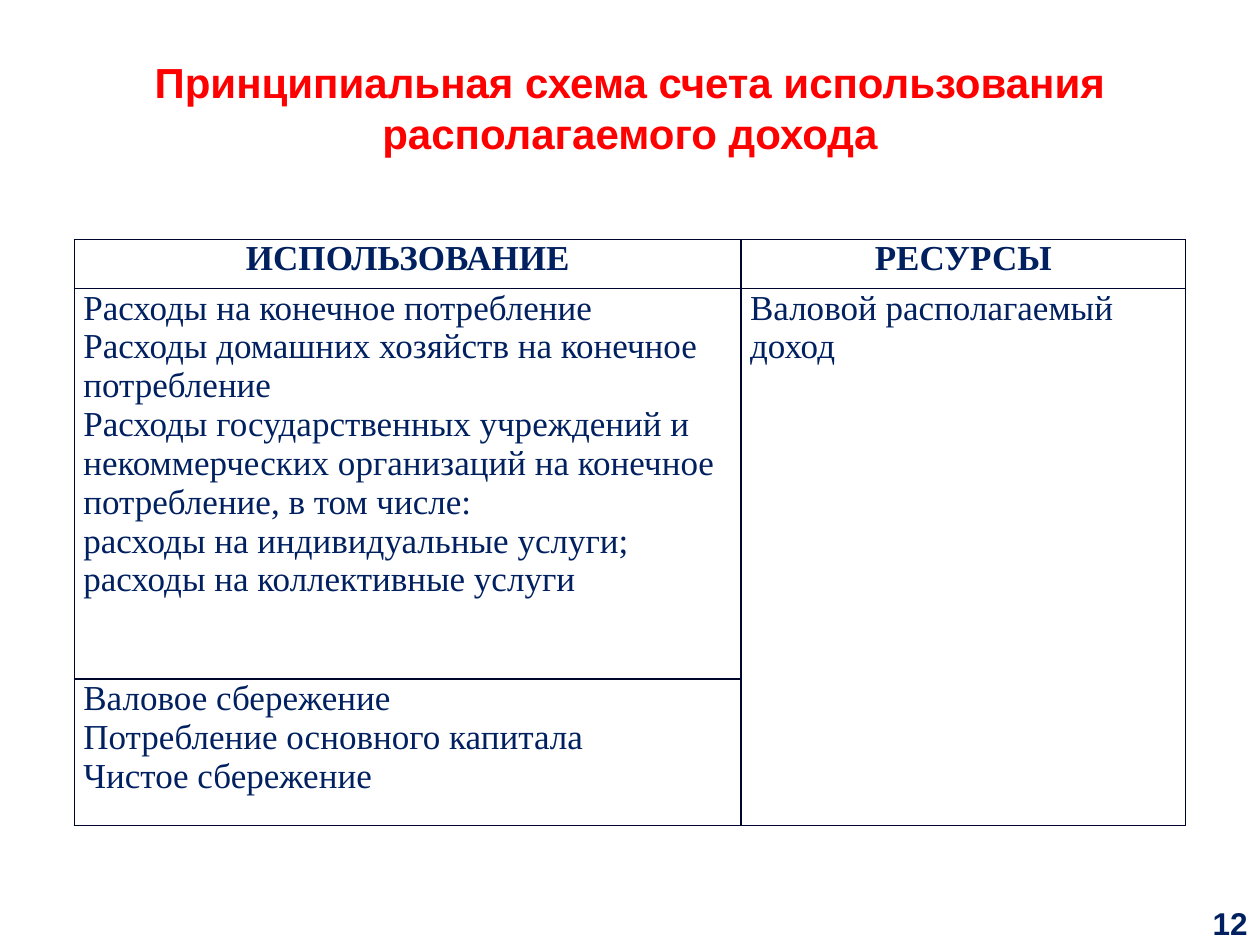
"""Build a slide with the scheme of the use of disposable income account."""
from lxml import etree
from pptx import Presentation
from pptx import util as u
from pptx.dml.color import RGBColor
from pptx.enum import text
from pptx.oxml import ns

RED = RGBColor(0xFF, 0x00, 0x00)
NAVY = RGBColor(0x00, 0x20, 0x60)
INK = RGBColor(0x00, 0x06, 0x2B)
LEFT, MID, RIGHT = text.PP_ALIGN.LEFT, text.PP_ALIGN.CENTER, text.PP_ALIGN.RIGHT


def write(frame, words, align, color, look):
    frame.word_wrap = True
    para = frame.paragraphs[0]
    para.text = words
    para.alignment = align
    for run in para.runs:
        run.font.color.rgb = color
        for key, val in look.items():
            setattr(run.font, key, val)


def edge(cell, side):
    line = etree.Element(ns.qn("a:" + side), w=str(u.Pt(1)))
    fill = etree.SubElement(line, ns.qn("a:solidFill"))
    etree.SubElement(fill, ns.qn("a:srgbClr"), val=str(INK))
    return line


deck = Presentation()
deck.slide_width, deck.slide_height = u.Cm(25.4), u.Cm(19.05)
slide = deck.slides.add_slide(deck.slide_layouts[6])

title = slide.shapes.add_textbox(u.Cm(0.6), u.Cm(1.02), u.Cm(24.2), u.Cm(2.3))
write(title.text_frame, "Принципиальная схема счета использования располагаемого дохода",
      MID, RED, {"name": "Arial", "size": u.Pt(24), "bold": True})

page = slide.shapes.add_textbox(u.Cm(24.1), u.Cm(18.14), u.Cm(1.3), u.Cm(0.98))
page.text_frame.vertical_anchor = text.MSO_ANCHOR.BOTTOM
write(page.text_frame, "12", RIGHT, NAVY,
      {"name": "Arial", "size": u.Pt(18), "bold": True})

rows = [
    ["ИСПОЛЬЗОВАНИЕ", "РЕСУРСЫ"],
    ["Расходы на конечное потребление\n"
     "Расходы домашних хозяйств на конечное потребление\n"
     "Расходы государственных учреждений и некоммерческих организаций "
     "на конечное потребление, в том числе:\n"
     "расходы на индивидуальные услуги;\n"
     "расходы на коллективные услуги",
     "Валовой располагаемый доход"],
    ["Валовое сбережение\nПотребление основного капитала\nЧистое сбережение", ""],
]
wides, highs = [13.44, 8.96], [0.99, 7.87, 2.95]
pads = {"margin_left": u.Cm(0.18), "margin_right": u.Cm(0.18),
        "margin_top": 0, "margin_bottom": 0}

grid = slide.shapes.add_table(3, 2, u.Cm(1.5), u.Cm(4.83),
                              u.Cm(sum(wides)), u.Cm(sum(highs))).table
grid.first_row = grid.horz_banding = False
for col, wide in zip(grid.columns, wides):
    col.width = u.Cm(wide)
for row, high in zip(grid.rows, highs):
    row.height = u.Cm(high)
grid.cell(1, 1).merge(grid.cell(2, 1))

for r, row in enumerate(rows):
    for c, words in enumerate(row):
        cell = grid.cell(r, c)
        for key, val in pads.items():
            setattr(cell, key, val)
        cell.fill.background()
        props = cell._tc.get_or_add_tcPr()
        for i, side in enumerate(["lnL", "lnR", "lnT", "lnB"]):
            props.insert(i, edge(cell, side))
        if words:
            write(cell.text_frame, words, LEFT if r else MID, NAVY,
                  {"name": "Times New Roman", "size": u.Pt(20), "bold": r == 0})

deck.save("out.pptx")
